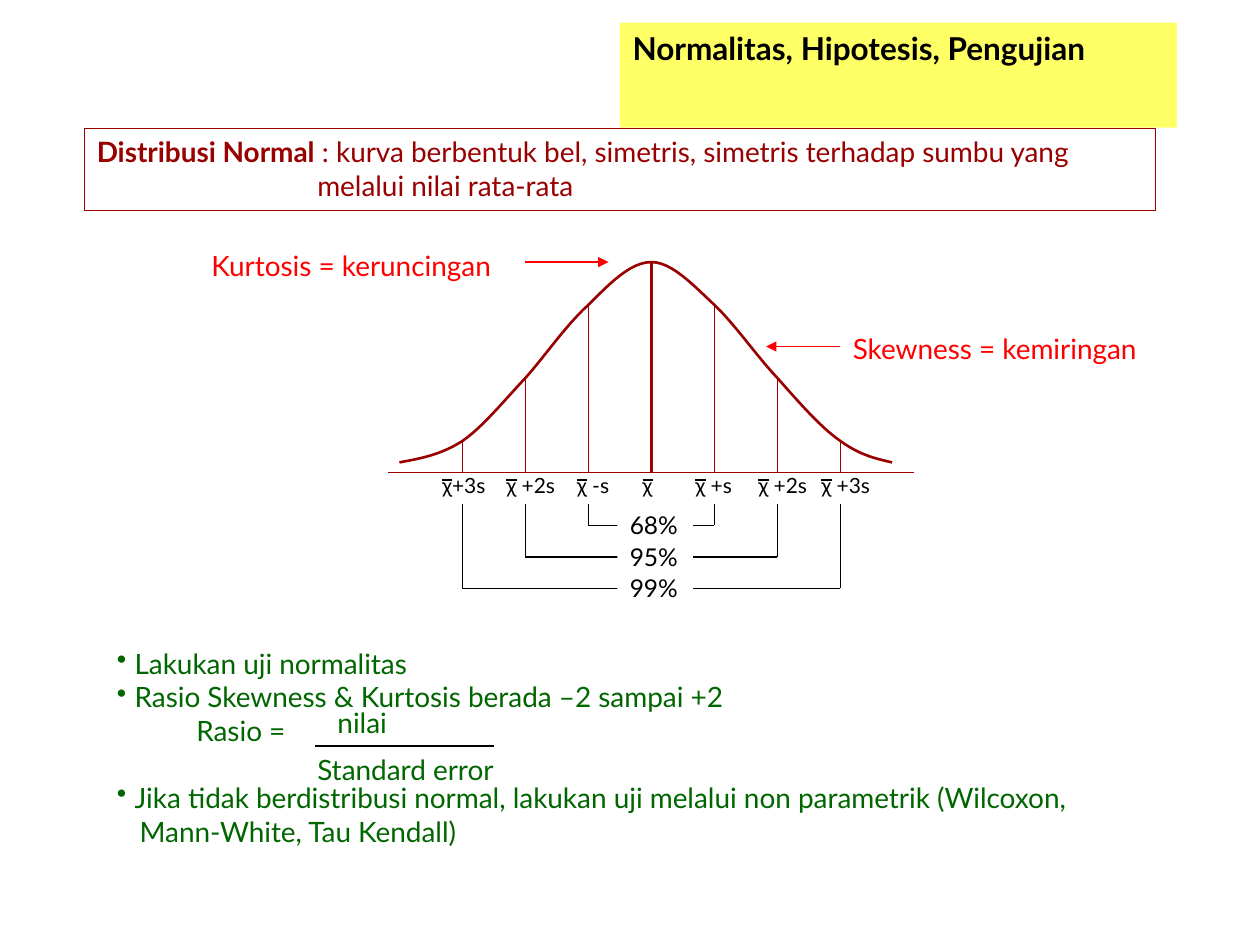
"""Build a slide on the normal distribution, its bell curve and normality testing."""
from dataclasses import dataclass

from pptx import Presentation
from pptx.dml.color import RGBColor as RGB
from pptx.enum.shapes import MSO_CONNECTOR as CONN, MSO_SHAPE as SHAPE
from pptx.enum.text import MSO_ANCHOR as ANCHOR, MSO_AUTO_SIZE as AUTO, PP_ALIGN as ALIGN
from pptx.oxml.ns import qn
from pptx.util import Inches, Pt
from lxml.etree import SubElement


@dataclass(frozen=True)
class Theme:
    font: str = "Lato"
    black: RGB = RGB(0x00, 0x00, 0x00)
    white: RGB = RGB(0xFF, 0xFF, 0xFF)
    yellow: RGB = RGB(0xFF, 0xFF, 0x66)
    maroon: RGB = RGB(0x99, 0x00, 0x00)
    red: RGB = RGB(0xFF, 0x00, 0x00)
    green: RGB = RGB(0x00, 0x66, 0x00)
    title: int = 18
    body: int = 16
    percent: int = 14
    label: int = 12


T = Theme()


def write(sp, paragraphs, size, color, wrap=False):
    tf = sp.text_frame
    tf.word_wrap = wrap
    tf.auto_size = AUTO.SHAPE_TO_FIT_TEXT
    tf.vertical_anchor = ANCHOR.TOP
    for i, runs in enumerate(paragraphs):
        p = tf.add_paragraph() if i else tf.paragraphs[0]
        p.alignment = ALIGN.LEFT
        for text, bold in runs:
            r = p.add_run()
            r.text = text
            r.font.name, r.font.size, r.font.bold = T.font, Pt(size), bold
            r.font.color.rgb = color
    return tf.paragraphs


def line(x1, y1, x2, y2, color=T.black, width=0.75, arrow=False):
    c = s.shapes.add_connector(CONN.STRAIGHT, Inches(x1), Inches(y1), Inches(x2), Inches(y2))
    c.line.color.rgb = color
    c.line.width = Pt(width)
    spPr = c.element.spPr
    if arrow:
        SubElement(spPr.find(qn("a:ln")), qn("a:tailEnd"), type="triangle")
    SubElement(spPr, qn("a:effectLst"))


prs = Presentation()
prs.slide_width, prs.slide_height = Inches(10), Inches(7.5)
s = prs.slides.add_slide(prs.slide_layouts[5])

title = s.shapes.title
title.left, title.top, title.width, title.height = map(Inches, (4.92, 0.18, 4.42, 0.4))
title.fill.solid()
title.fill.fore_color.rgb = T.yellow
write(title, [[("Normalitas, Hipotesis, Pengujian", True)]], T.title, T.black, wrap=True)

definition = s.shapes.add_shape(SHAPE.RECTANGLE, Inches(0.67), Inches(1.02), Inches(8.5), Inches(0.65))
definition.shadow.inherit = False
definition.fill.background()
definition.line.color.rgb = T.maroon
definition.line.width = Pt(0.75)
ps = write(definition, [
    [("Distribusi Normal", True),
     (" : kurva berbentuk bel, simetris, simetris terhadap sumbu yang", False)],
    [("melalui nilai rata-rata", False)],
], T.body, T.maroon, wrap=True)
ps[1]._p.get_or_add_pPr().set("marL", str(Inches(1.75)))

mean, step, base = 5.17, 0.5, 3.75
line(3.08, base, 7.25, base, T.maroon, 1)
line(mean, base, mean, 2.08, T.maroon, 1.5)
for i, top in enumerate((2.42, 3, 3.5), 1):
    for side in (-1, 1):
        x = mean + side * i * step
        line(x, base, x, top, T.maroon)

beziers = [
    (3.17, 3.67, 3.33, 3.64, 3.5, 3.61, 3.67, 3.5),
    (3.67, 3.5, 3.83, 3.39, 4, 3.18, 4.17, 3),
    (4.17, 3, 4.33, 2.82, 4.5, 2.57, 4.67, 2.42),
    (4.67, 2.42, 4.83, 2.26, 5, 2.08, 5.17, 2.08),
    (5.17, 2.08, 5.33, 2.08, 5.5, 2.26, 5.67, 2.42),
    (5.67, 2.42, 5.83, 2.57, 6, 2.82, 6.17, 3),
    (6.17, 3, 6.33, 3.18, 6.51, 3.39, 6.67, 3.5),
    (6.67, 3.5, 6.82, 3.61, 6.95, 3.64, 7.08, 3.67),
]
points = []
for b in beziers:
    for n in range(1, 13):
        t = n / 12
        weights = ((1 - t) ** 3, 3 * t * (1 - t) ** 2, 3 * t ** 2 * (1 - t), t ** 3)
        points.append(tuple(Inches(sum(w * v for w, v in zip(weights, b[k::2]))) for k in (0, 1)))
builder = s.shapes.build_freeform(Inches(3.17), Inches(3.67))
builder.add_line_segments(points, close=False)
curve = builder.convert_to_shape()
curve.shadow.inherit = False
curve.fill.background()
curve.line.color.rgb = T.maroon
curve.line.width = Pt(1.5)

axis_labels = [
    ("χ+3s", 3.41, 0.58), ("χ +2s", 3.92, 0.63), ("χ -s", 4.48, 0.48), ("χ", 5, 0.27),
    ("χ +s", 5.42, 0.54), ("χ +2s", 5.92, 0.63), ("χ +3s", 6.42, 0.63),
]
for text, x, w in axis_labels:
    label = s.shapes.add_textbox(Inches(x), Inches(3.7), Inches(w), Inches(0.3))
    write(label, [[(text, False)]], T.label, T.black)
    line(x + 0.1, 3.81, x + 0.18, 3.81)

for i, text in enumerate(("68%", "95%", "99%")):
    half, y = (i + 1) * step, 4.17 + 0.25 * i
    for x in (mean - half, mean + half):
        line(x, 4, x, y)
    line(mean - half, y, mean + half, y)
for i, text in enumerate(("68%", "95%", "99%")):
    percent = s.shapes.add_shape(
        SHAPE.RECTANGLE, Inches(4.9), Inches(4 + 0.25 * i), Inches(0.6), Inches(0.33))
    percent.shadow.inherit = False
    percent.fill.solid()
    percent.fill.fore_color.rgb = T.white
    percent.line.fill.background()
    write(percent, [[(text, False)]], T.percent, T.black)

steps = [
    ("Lakukan uji normalitas", True, 0.14),
    ("Rasio Skewness & Kurtosis berada –2 sampai +2", True, 0.14),
    ("Rasio =", False, 0.63),
    ("Jika tidak berdistribusi normal, lakukan uji melalui non parametrik (Wilcoxon,", True, 0.14),
    ("Mann-White, Tau Kendall)", False, 0.18),
]
notes = s.shapes.add_textbox(Inches(0.83), Inches(5.08), Inches(8.25), Inches(1.7))
ps = write(notes, [[(text, False)] for text, _, _ in steps], T.body, T.green, wrap=True)
ps[3].space_before = Pt(19.2)
for p, (_, bullet, indent) in zip(ps, steps):
    pPr = p._p.get_or_add_pPr()
    pPr.set("marL", str(Inches(indent)))
    if bullet:
        pPr.set("indent", str(-Inches(indent)))
        SubElement(pPr, qn("a:buChar"), char="•")

captions = [
    ("Skewness = kemiringan", 6.67, 2.58, 2.54, T.red),
    ("Kurtosis = keruncingan", 1.58, 1.92, 2.47, T.red),
    ("nilai", 2.58, 5.55, 0.59, T.green),
    ("Standard error", 2.42, 5.92, 1.63, T.green),
]
for text, x, y, w, color in captions:
    caption = s.shapes.add_textbox(Inches(x), Inches(y), Inches(w), Inches(0.37))
    write(caption, [[(text, False)]], T.body, color)
line(4.17, 2.08, 4.83, 2.08, T.red, arrow=True)
line(6.67, 2.75, 6.08, 2.75, T.red, arrow=True)
line(2.5, 5.92, 3.92, 5.92)

prs.save("out.pptx")
